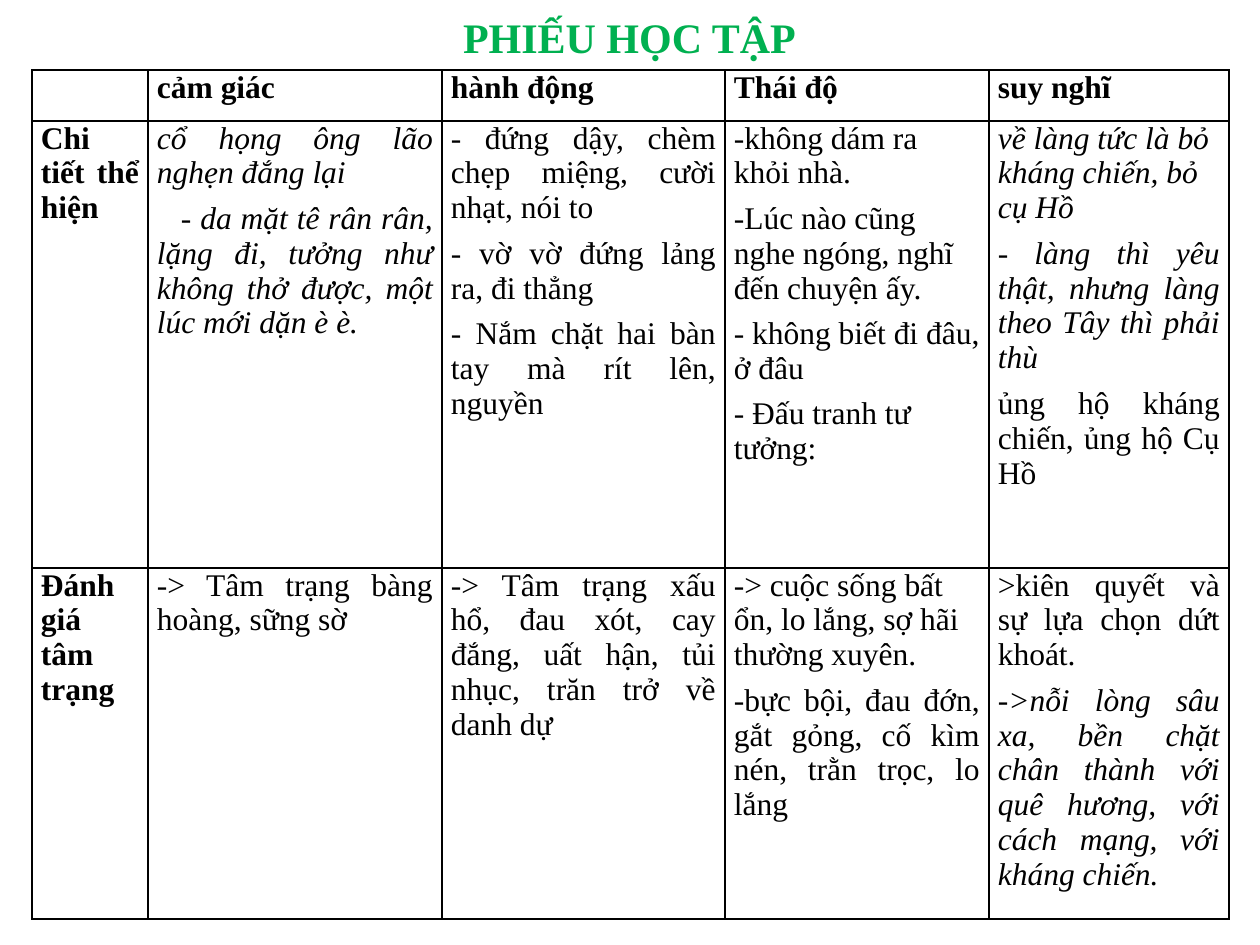
"""Build a one-slide study worksheet: a green title above a bordered table."""
from lxml import etree
from pptx import Presentation
from pptx.dml.color import RGBColor
from pptx.enum.text import MSO_ANCHOR, PP_ALIGN
from pptx.oxml.ns import qn
from pptx.util import Pt

LEFT, CENTER, JUSTIFY = PP_ALIGN.LEFT, PP_ALIGN.CENTER, PP_ALIGN.JUSTIFY
TOP = MSO_ANCHOR.TOP
GREEN = RGBColor(0x00, 0xB0, 0x50)
BLACK = RGBColor(0x00, 0x00, 0x00)
FONT = "Times New Roman"
PX = 914400 / 126

TITLE = "PHIẾU HỌC TẬP"
TITLE_BOX = (261, 5, 737, 66)
TABLE_ORIGIN = (32, 70)
COLUMN_WIDTHS = [116, 294, 283, 264, 240]
ROW_HEIGHTS = [51, 447, 351]
CELL_MARGIN = 9
FIRST_LINE_INDENT = 24

PLAIN = {}
BOLD = {"bold": True}
ITALIC = {"italic": True}
INDENTED = {"italic": True, "indent": FIRST_LINE_INDENT}
RAGGED = {"align": LEFT}
RAGGED_ITALIC = {"align": LEFT, "italic": True}

ROWS = [
    [
        [],
        [("cảm giác", BOLD)],
        [("hành động", BOLD)],
        [("Thái độ", BOLD)],
        [("suy nghĩ", BOLD)],
    ],
    [
        [("Chi tiết thể hiện", BOLD)],
        [
            ("cổ họng ông lão nghẹn đắng lại", ITALIC),
            ("- da mặt tê rân rân, lặng đi, tưởng như không thở được, "
             "một lúc mới dặn è è.", INDENTED),
        ],
        [
            ("- đứng dậy, chèm chẹp miệng, cười nhạt, nói to", PLAIN),
            ("- vờ vờ đứng lảng ra, đi thẳng", PLAIN),
            ("- Nắm chặt hai bàn tay mà rít lên, nguyền", PLAIN),
        ],
        [
            ("-không dám ra khỏi nhà.", RAGGED),
            ("-Lúc nào cũng nghe ngóng, nghĩ đến chuyện ấy.", RAGGED),
            ("- không biết đi đâu, ở đâu", RAGGED),
            ("- Đấu tranh tư tưởng:", RAGGED),
        ],
        [
            ("về làng tức là bỏ kháng chiến, bỏ cụ Hồ", RAGGED_ITALIC),
            ("- làng thì yêu thật, nhưng làng theo Tây thì phải thù", ITALIC),
            ("ủng hộ kháng chiến, ủng hộ Cụ Hồ", PLAIN),
        ],
    ],
    [
        [("Đánh giá tâm trạng", BOLD)],
        [("-> Tâm trạng bàng hoàng, sững sờ", PLAIN)],
        [("-> Tâm trạng xấu hổ, đau xót, cay đắng, uất hận, tủi nhục, "
          "trăn trở về danh dự", PLAIN)],
        [
            ("-> cuộc sống bất ổn, lo lắng, sợ hãi thường xuyên.", RAGGED),
            ("-bực bội, đau đớn, gắt gỏng, cố kìm nén, trằn trọc, lo lắng", PLAIN),
        ],
        [
            (">kiên quyết và sự lựa chọn dứt khoát.", PLAIN),
            ("->nỗi lòng sâu xa, bền chặt chân thành với quê hương, "
             "với cách mạng, với kháng chiến.", ITALIC),
        ],
    ],
]


def px(length):
    return round(length * PX)


def write(paragraph, text, size, color, align=JUSTIFY, bold=False, italic=False, indent=0):
    paragraph.text = text
    paragraph.alignment = align
    font = paragraph.font
    font.name, font.size, font.bold, font.italic = FONT, Pt(size), bold, italic
    font.color.rgb = color
    if indent:
        paragraph._p.get_or_add_pPr().set("indent", str(px(indent)))


def add_borders(cell):
    properties = cell._tc.get_or_add_tcPr()
    for side in ("a:lnL", "a:lnR", "a:lnT", "a:lnB"):
        line = etree.SubElement(properties, qn(side), w=str(Pt(1)))
        fill = etree.SubElement(line, qn("a:solidFill"))
        etree.SubElement(fill, qn("a:srgbClr"), val=str(BLACK))


def fill_cell(cell, entries):
    cell.margin_left = cell.margin_right = px(CELL_MARGIN)
    cell.margin_top = cell.margin_bottom = 0
    cell.vertical_anchor = TOP
    add_borders(cell)
    cell.fill.background()
    frame = cell.text_frame
    for index, (text, style) in enumerate(entries):
        paragraph = frame.add_paragraph() if index else frame.paragraphs[0]
        write(paragraph, text, 18, BLACK, **style)
        paragraph.space_before = Pt(6)


def add_title(slide):
    frame = slide.shapes.add_textbox(*map(px, TITLE_BOX)).text_frame
    frame.word_wrap = True
    write(frame.paragraphs[0], TITLE, 24, GREEN, align=CENTER, bold=True)


def add_worksheet(slide):
    size = (sum(COLUMN_WIDTHS), sum(ROW_HEIGHTS))
    table = slide.shapes.add_table(
        len(ROWS), len(COLUMN_WIDTHS), *map(px, TABLE_ORIGIN + size)).table
    table.first_row = table.horz_banding = False
    for column, width in zip(table.columns, COLUMN_WIDTHS):
        column.width = px(width)
    for row, height, contents in zip(table.rows, ROW_HEIGHTS, ROWS):
        row.height = px(height)
        for cell, entries in zip(row.cells, contents):
            fill_cell(cell, entries)


def main():
    presentation = Presentation()
    presentation.slide_width, presentation.slide_height = px(1260), px(945)
    slide = presentation.slides.add_slide(presentation.slide_layouts[6])
    add_title(slide)
    add_worksheet(slide)
    presentation.save("out.pptx")


if __name__ == "__main__":
    main()
